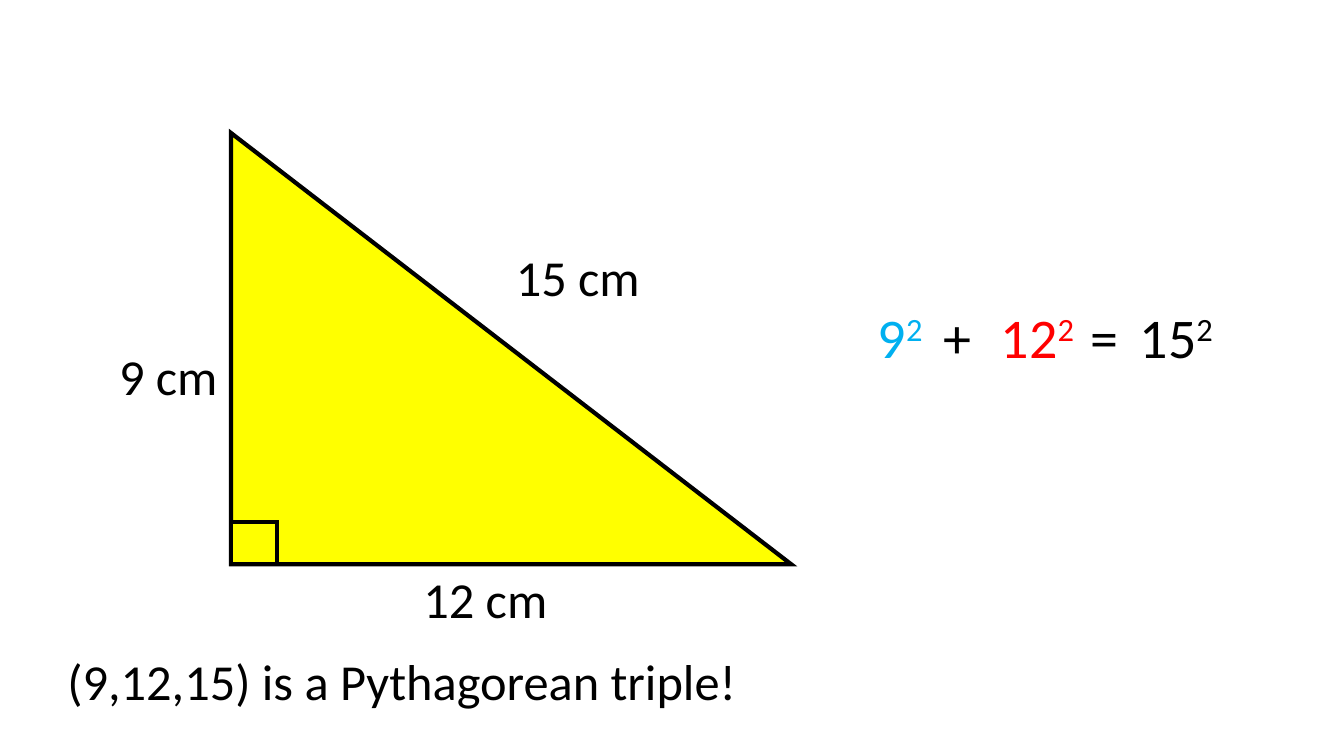
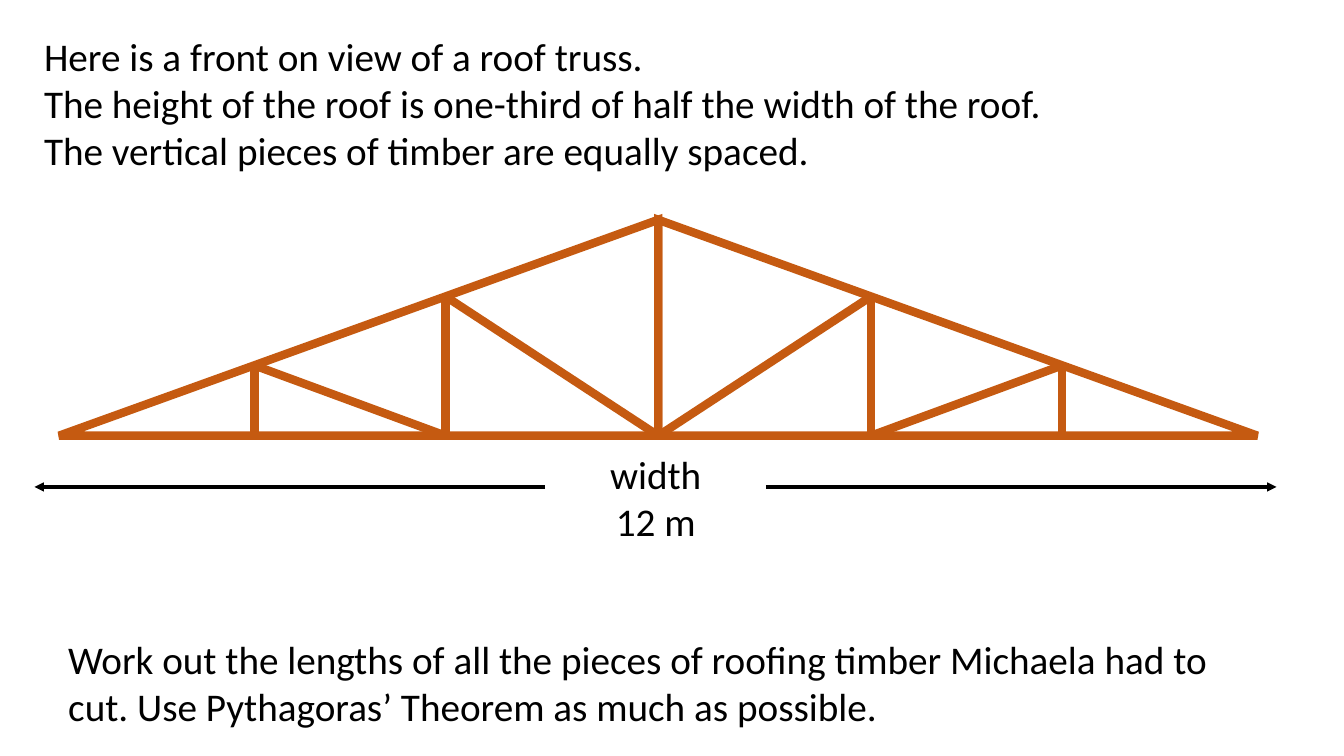
from lxml.etree import SubElement
from pptx import Presentation
from pptx.dml.color import RGBColor
from pptx.enum.shapes import MSO_CONNECTOR, MSO_SHAPE
from pptx.enum.text import PP_ALIGN
from pptx.oxml.ns import qn
from pptx.util import Cm, Pt

COLORS = {
    "ink": "000000",
    "yellow": "FFFF00",
    "blue": "00B0F0",
    "red": "FF0000",
    "timber": "C55A11",
}
FONT = "Calibri"


def write(page, left, top, width, height, paragraphs, size=28, align=PP_ALIGN.LEFT):
    box = page.shapes.add_textbox(Cm(left), Cm(top), Cm(width), Cm(height))
    frame = box.text_frame
    frame.word_wrap = True
    for index, spans in enumerate(paragraphs):
        para = frame.paragraphs[0] if index == 0 else frame.add_paragraph()
        para.alignment = align
        if isinstance(spans, str):
            spans = [(spans, {})]
        for text, style in spans:
            span = para.add_run()
            span.text = text
            span.font.name = FONT
            span.font.size = Pt(size)
            span.font.color.rgb = RGBColor.from_string(COLORS[style.get("color", "ink")])
            properties = span._r.get_or_add_rPr()
            if style.get("raised"):
                properties.set("baseline", "30000")
            if "spacing" in style:
                properties.set("spc", str(style["spacing"] * 100))


def stroke(shape, color, width, arrow=False):
    shape.line.color.rgb = RGBColor.from_string(COLORS[color])
    shape.line.width = Pt(width)
    properties = shape._element.spPr
    outline = properties.find(qn("a:ln"))
    SubElement(outline, qn("a:miter"), lim="800000")
    if arrow:
        SubElement(outline, qn("a:tailEnd"), type="triangle")
    SubElement(properties, qn("a:effectLst"))


deck = Presentation()
deck.slide_width = Cm(33.87)
deck.slide_height = Cm(19.05)
blank = deck.slide_layouts[6]

page = deck.slides.add_slide(blank)
corner_left, corner_bottom = 5.82, 14.22
for kind, width, height in (
    (MSO_SHAPE.RIGHT_TRIANGLE, 14.12, 10.87),
    (MSO_SHAPE.RECTANGLE, 1.17, 1.07),
):
    shape = page.shapes.add_shape(
        kind, Cm(corner_left), Cm(corner_bottom - height), Cm(width), Cm(height)
    )
    shape.fill.solid()
    shape.fill.fore_color.rgb = RGBColor.from_string(COLORS["yellow"])
    stroke(shape, "ink", 3)

for label, left, top in (("9 cm", 2.75, 8.56), ("12 cm", 10.42, 14.2), ("15 cm", 12.75, 6.07)):
    write(page, left, top, 4, 1.8, [label], size=36)

equation = [
    ("9", {"color": "blue"}),
    ("2", {"color": "blue", "raised": True}),
    (" + ", {"spacing": 6}),
    ("12", {"color": "red"}),
    ("2", {"color": "red", "raised": True}),
    (" = ", {"spacing": 3}),
    ("15", {}),
    ("2", {"raised": True}),
]
write(page, 21.87, 7.49, 11.6, 1.96, [equation], size=40)
write(page, 1.45, 16.26, 30.78, 1.8, ["(9,12,15) is a Pythagorean triple!"], size=36)

page = deck.slides.add_slide(blank)
write(page, 0.86, 0.69, 31.67, 3.84, [
    "Here is a front on view of a roof truss.",
    "The height of the roof is one-third of half the width of the roof.",
    "The vertical pieces of timber are equally spaced.",
])

centre, roof_top, base = 16.59, 5.54, 10.98
half_width, rise = 15.1, base - roof_top
inner_offset, outer_offset = 5.36, 10.18
inner_top = roof_top + rise * inner_offset / half_width
outer_top = roof_top + rise * outer_offset / half_width

for side in (-1, 1):
    left = centre if side == 1 else centre - half_width
    roof = page.shapes.add_shape(
        MSO_SHAPE.RIGHT_TRIANGLE, Cm(left), Cm(roof_top), Cm(half_width), Cm(rise)
    )
    roof.fill.background()
    if side == -1:
        roof._element.spPr.find(qn("a:xfrm")).set("flipH", "1")
    stroke(roof, "timber", 6)

    inner = centre + side * inner_offset
    outer = centre + side * outer_offset
    for start_x, start_y, end_x in (
        (inner, inner_top, inner),
        (outer, outer_top, outer),
        (inner, inner_top, centre),
        (outer, outer_top, inner),
    ):
        timber = page.shapes.add_connector(
            MSO_CONNECTOR.STRAIGHT, Cm(start_x), Cm(start_y), Cm(end_x), Cm(base)
        )
        stroke(timber, "timber", 6)

middle, arrow_y = 16.52, 12.27
for side in (-1, 1):
    arrow = page.shapes.add_connector(
        MSO_CONNECTOR.STRAIGHT,
        Cm(middle + side * 2.78), Cm(arrow_y), Cm(middle + side * 15.65), Cm(arrow_y),
    )
    stroke(arrow, "ink", 2.25, arrow=True)

write(page, 14.05, 11.23, 4.95, 2.64, ["width", "12 m"], align=PP_ALIGN.CENTER)
write(page, 1.47, 15.88, 29.77, 2.64, [
    "Work out the lengths of all the pieces of roofing timber Michaela had to cut. "
    "Use Pythagoras’ Theorem as much as possible."
])

deck.save("out.pptx")
